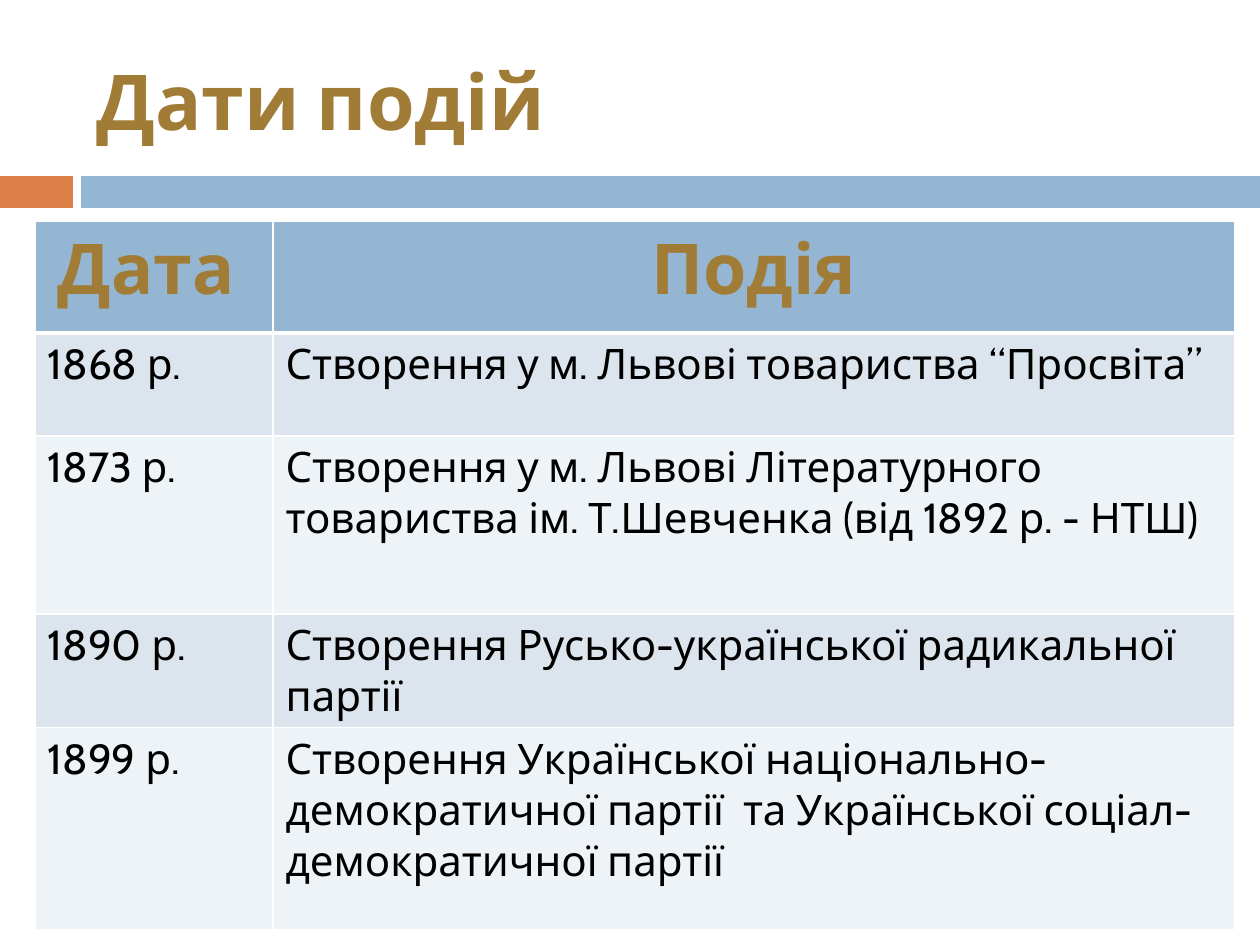
from dataclasses import dataclass

from lxml import etree
from pptx import Presentation
from pptx import util as u
from pptx.dml.color import RGBColor
from pptx.enum import shapes, text
from pptx.oxml.ns import qn

PX_PER_INCH = 126


@dataclass(frozen=True)
class Theme:
    font: str = "Cabin"
    gold: str = "A17C36"
    orange: str = "DD8047"
    blue: str = "94B6D2"
    ink: str = "000000"
    border: str = "FFFFFF"
    bands: tuple = ("DCE5EE", "EEF3F7")
    title_size: int = 44
    header_size: int = 40
    body_size: int = 24


THEME = Theme()
COLUMNS = (238, 962)
ROWS = (112, 103, 178, 103, 202)
EVENTS = [
    ("Дата ", "Подія"),
    ("1868 р.", "Створення у м. Львові товариства “Просвіта”"),
    ("1873 р.", "Створення у м. Львові Літературного товариства "
                "ім. Т.Шевченка (від 1892 р. - НТШ)"),
    ("1890 р.", "Створення Русько-української радикальної партії"),
    ("1899 р.", "Створення Української національно-демократичної партії  "
                "та Української соціал-демократичної партії"),
]


def px(length):
    return u.Emu(round(length * u.Inches(1) / PX_PER_INCH))


def rgb(color):
    return RGBColor.from_string(color)


def add_run(paragraph, words, size, color, bold):
    run = paragraph.add_run()
    run.text = words
    run.font.name = THEME.font
    run.font.size = u.Pt(size)
    run.font.bold = bold
    run.font.color.rgb = rgb(color)


def add_title(slide, box, words):
    frame = slide.shapes.add_textbox(*map(px, box)).text_frame
    frame.word_wrap = True
    frame.vertical_anchor = text.MSO_ANCHOR.MIDDLE
    add_run(frame.paragraphs[0], words, THEME.title_size, THEME.gold, True)


def add_divider(slide, box, accent_width, gap):
    """Draw a short accent block and a long bar, parted by a gap."""
    left, top, width, height = box
    bar_offset = accent_width + gap
    for offset, length, color in (
        (0, accent_width, THEME.orange),
        (bar_offset, width - bar_offset, THEME.blue),
    ):
        block = slide.shapes.add_shape(
            shapes.MSO_SHAPE.RECTANGLE,
            px(left + offset), px(top), px(length), px(height))
        block.shadow.inherit = False
        block.fill.solid()
        block.fill.fore_color.rgb = rgb(color)
        block.line.fill.background()


def set_borders(cell, bottom_width, top_width):
    properties = cell._tc.get_or_add_tcPr()
    widths = {"a:lnL": 1, "a:lnR": 1, "a:lnT": top_width, "a:lnB": bottom_width}
    for position, (side, width) in enumerate(widths.items()):
        line = etree.Element(qn(side), w=str(u.Pt(width)))
        fill = etree.SubElement(line, qn("a:solidFill"))
        etree.SubElement(fill, qn("a:srgbClr"), val=THEME.border)
        properties.insert(position, line)


def add_events(slide, box):
    table = slide.shapes.add_table(len(ROWS), len(COLUMNS), *map(px, box)).table
    for column, width in zip(table.columns, COLUMNS):
        column.width = px(width)
    for index, (row, height, words) in enumerate(zip(table.rows, ROWS, EVENTS)):
        row.height = px(height)
        header = index == 0
        for cell, content in zip(row.cells, words):
            cell.fill.solid()
            cell.fill.fore_color.rgb = rgb(
                THEME.blue if header else THEME.bands[(index - 1) % 2])
            set_borders(cell, 3 if header else 1, 3 if index == 1 else 1)
            paragraph = cell.text_frame.paragraphs[0]
            if header:
                paragraph.alignment = text.PP_ALIGN.CENTER
                add_run(paragraph, content, THEME.header_size, THEME.gold, True)
            else:
                add_run(paragraph, content, THEME.body_size, THEME.ink, False)


def main():
    deck = Presentation()
    deck.slide_width, deck.slide_height = px(1260), px(945)
    slide = deck.slides.add_slide(deck.slide_layouts[6])
    add_divider(slide, (0, 176, 1260, 32), accent_width=73, gap=8)
    add_title(slide, (84, 32, 1124, 136), "Дати подій")
    add_events(slide, (35, 221, sum(COLUMNS), sum(ROWS)))
    deck.save("out.pptx")


if __name__ == "__main__":
    main()
